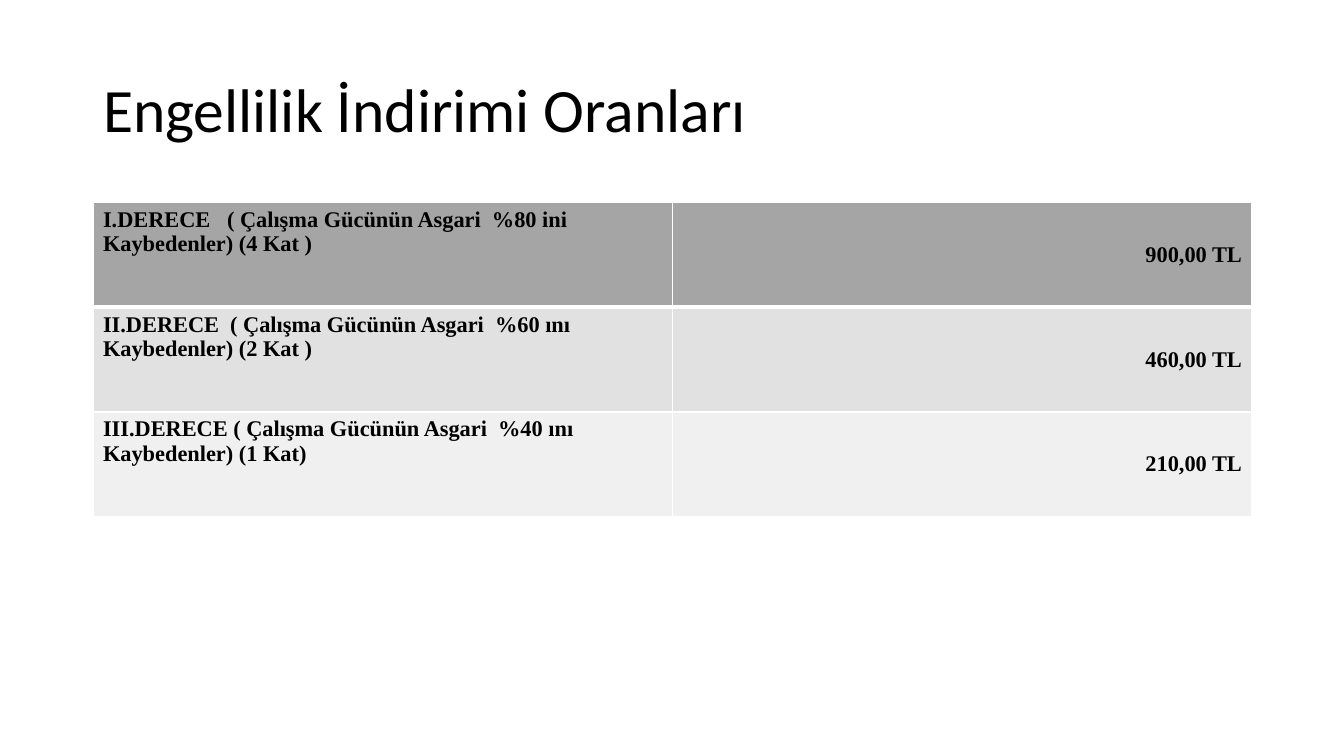
"""Build the slide on disability allowance rates."""
import pptx
import pptx.util
import pptx.dml.color
import pptx.enum.text
import pptx.oxml

TITLE = "Engellilik İndirimi Oranları"
ROWS = [
    ("I.DERECE   ( Çalışma Gücünün Asgari  %80 ini  Kaybedenler) (4 Kat )", "900,00 TL", "A5A5A5"),
    ("II.DERECE  ( Çalışma Gücünün Asgari  %60 ını  Kaybedenler) (2 Kat )", "460,00 TL", "E1E1E1"),
    ("III.DERECE ( Çalışma Gücünün Asgari  %40 ını  Kaybedenler) (1 Kat)", "210,00 TL", "F0F0F0"),
]
WIDE, HIGH = 1344, 756
LEFT, SPAN = 93, 1159
TITLE_TOP, TITLE_HIGH = 40, 146
TABLE_TOP, ROW_HIGH = 202, 105
INK, EDGE = "000000", "FFFFFF"
THIN, THICK = 1, 3

ALIGN = pptx.enum.text.PP_ALIGN
ANCHOR = pptx.enum.text.MSO_ANCHOR


def px(num):
    return pptx.util.Emu(round(num * 914400 / 100.8))


def color(code):
    return pptx.dml.color.RGBColor.from_string(code)


def write(para, text, font, size, bold, align):
    para.alignment = align
    run = para.add_run()
    run.text = text
    run.font.name = font
    run.font.size = pptx.util.Pt(size)
    run.font.bold = bold
    run.font.color.rgb = color(INK)


def border(cell, base):
    props = cell._tc.get_or_add_tcPr()
    for side, width in (("L", THIN), ("R", THIN), ("T", THIN), ("B", base)):
        props.append(pptx.oxml.parse_xml(
            f'<a:ln{side} xmlns:a="http://schemas.openxmlformats.org/drawingml/2006/main" '
            f'w="{pptx.util.Pt(width)}"><a:solidFill><a:srgbClr val="{EDGE}"/>'
            f'</a:solidFill></a:ln{side}>'))


def add_title(slide):
    title = slide.shapes.title
    title.left, title.top = px(LEFT), px(TITLE_TOP)
    title.width, title.height = px(SPAN), px(TITLE_HIGH)
    title.text_frame.vertical_anchor = ANCHOR.MIDDLE
    para = title.text_frame.paragraphs[0]
    para.line_spacing = 0.9
    write(para, TITLE, "Calibri", 44, False, ALIGN.LEFT)


def add_rates(slide):
    count = len(ROWS)
    table = slide.shapes.add_table(
        count, 2, px(LEFT), px(TABLE_TOP), px(SPAN), px(ROW_HIGH * count)).table
    styles = ((ALIGN.LEFT, ANCHOR.TOP), (ALIGN.RIGHT, ANCHOR.MIDDLE))
    for row, (grade, rate, fill) in enumerate(ROWS):
        for col, text in enumerate((grade, rate)):
            align, anchor = styles[col]
            cell = table.cell(row, col)
            border(cell, THIN if row else THICK)
            cell.fill.solid()
            cell.fill.fore_color.rgb = color(fill)
            cell.vertical_anchor = anchor
            write(cell.text_frame.paragraphs[0], text, "Times New Roman", 16, True, align)


def main():
    deck = pptx.Presentation()
    deck.slide_width, deck.slide_height = px(WIDE), px(HIGH)
    slide = deck.slides.add_slide(deck.slide_layouts[5])
    add_title(slide)
    add_rates(slide)
    deck.save("out.pptx")


if __name__ == "__main__":
    main()
